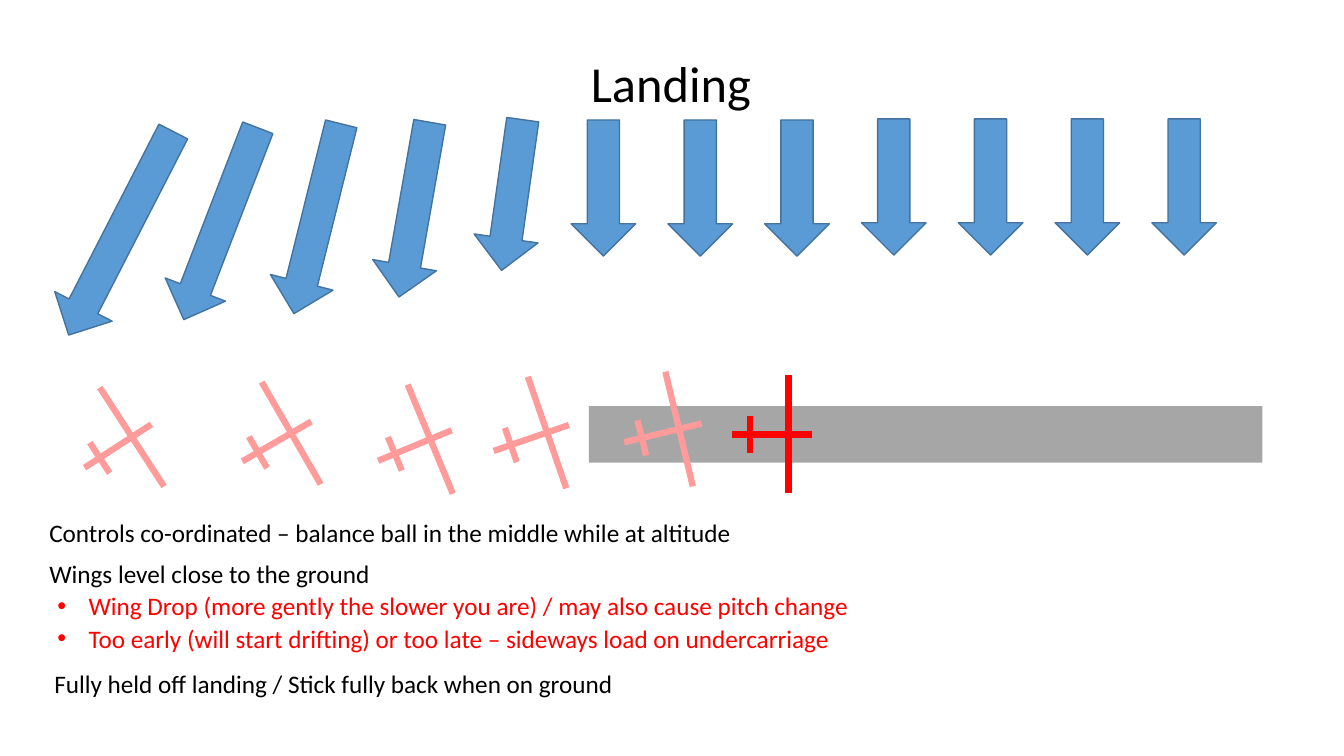
from math import cos, radians, sin

from lxml import etree
from pptx import Presentation
from pptx.dml.color import RGBColor
from pptx.enum.shapes import MSO_CONNECTOR, MSO_SHAPE
from pptx.enum.text import MSO_ANCHOR, MSO_AUTO_SIZE, PP_ALIGN
from pptx.oxml.ns import qn
from pptx.util import Inches, Pt

RECTANGLE = MSO_SHAPE.RECTANGLE
DOWN_ARROW = MSO_SHAPE.DOWN_ARROW
STRAIGHT = MSO_CONNECTOR.STRAIGHT
TOP = MSO_ANCHOR.TOP
GROW = MSO_AUTO_SIZE.SHAPE_TO_FIT_TEXT
LEFT = PP_ALIGN.LEFT

BLACK = RGBColor(0x00, 0x00, 0x00)
RED = RGBColor(0xFF, 0x00, 0x00)
PINK = RGBColor(0xFF, 0x9B, 0x9B)
GREY = RGBColor(0xA6, 0xA6, 0xA6)
BLUE = RGBColor(0x5B, 0x9B, 0xD5)
DARK_BLUE = RGBColor(0x43, 0x73, 0x9E)

SLIDE_W, SLIDE_H = Inches(13.33), Inches(7.5)
ROWS = 75
CELL = SLIDE_H / ROWS

ARROW_W = 6.4
ARROW_PITCH = 9.6
SLANTED_ARROWS = [
    (8.8, 11.8, 22.7, 27.2),
    (18.7, 12, 20.4, 21.1),
    (28.3, 12, 19.4, 14),
    (37.9, 12, 17.6, 10),
    (47.6, 11.8, 15.1, 8),
]
STRAIGHT_LEFT, STRAIGHT_H = 56.65, 13.5
STRAIGHT_TOPS = [11.9] * 3 + [11.8] * 4

FUSELAGE, WING, TAIL = 7.9, 11.7, 3.6
WING_OFFSET, TAIL_OFFSET = 1.65, -2.15
PLANES = [
    (11.7, 44.25, 33, PINK),
    (27.45, 43.8, 30, PINK),
    (41.15, 44.2, 22.5, PINK),
    (52.7, 43.45, 19, PINK),
    (65.75, 42.95, 13.5, PINK),
    (76.55, 43.1, 0, RED),
]

NOTE_H = 4
NOTES = [
    (3.9, 50.8, 70.5, BLACK, False,
     "Controls co-ordinated – balance ball in the middle while at altitude"),
    (3.9, 54.9, 34.2, BLACK, False, "Wings level close to the ground"),
    (4.7, 58.1, 87.1, RED, True,
     "Wing Drop (more gently the slower you are) / may also cause pitch change"),
    (4.7, 61.3, 79.6, RED, True,
     "Too early (will start drifting) or too late – sideways load on undercarriage"),
    (4.4, 65.8, 58.2, BLACK, False,
     "Fully held off landing / Stick fully back when on ground"),
]


def cells(*lengths):
    return [round(length * CELL) for length in lengths]


def add_block(s, kind, box, fill, line=None, rotation=0):
    sp = s.shapes.add_shape(kind, *cells(*box))
    sp.shadow.inherit = False
    sp.rotation = rotation
    sp.fill.solid()
    sp.fill.fore_color.rgb = fill
    if line is None:
        sp.line.fill.background()
    else:
        sp.line.color.rgb = line
        sp.line.width = Pt(1)


def add_bar(group, x, y, dx, dy, color):
    ends = cells(x - dx, y - dy, x + dx, y + dy)
    bar = group.shapes.add_connector(STRAIGHT, *ends)
    bar.line.color.rgb = color
    bar.line.width = Pt(4.5)
    etree.SubElement(bar._element.spPr, qn("a:effectLst"))


def add_plane(s, x, y, pitch, color):
    group = s.shapes.add_group_shape()
    c, d = cos(radians(pitch)), sin(radians(pitch))
    for offset, span in ((WING_OFFSET, WING), (TAIL_OFFSET, TAIL)):
        add_bar(group, x + offset * c, y - offset * d,
                span / 2 * d, span / 2 * c, color)
    add_bar(group, x, y, FUSELAGE / 2 * c, -FUSELAGE / 2 * d, color)


def write_text(sp, text, size, color, bullet=False, wrap=False):
    tf = sp.text_frame
    tf.text = text
    tf.word_wrap = wrap
    tf.auto_size = GROW
    tf.vertical_anchor = TOP
    p = tf.paragraphs[0]
    p.alignment = LEFT
    if bullet:
        pPr = p._p.get_or_add_pPr()
        indent = Inches(0.31)
        pPr.set("marL", str(indent))
        pPr.set("indent", str(-indent))
        font = etree.SubElement(pPr, qn("a:buFont"))
        font.set("typeface", "Arial")
        etree.SubElement(pPr, qn("a:buChar")).set("char", "•")
    r = p.runs[0]
    r.font.name = "Calibri"
    r.font.size = Pt(size)
    r.font.color.rgb = color


def add_title(s, text, box):
    title = s.shapes.title
    title.left, title.top, title.width, title.height = cells(*box)
    write_text(title, text, 36, BLACK)


def main():
    prs = Presentation()
    prs.slide_width, prs.slide_height = SLIDE_W, SLIDE_H
    s = prs.slides.add_slide(prs.slide_layouts[5])

    add_block(s, RECTANGLE, (58.4, 40.3, 66.8, 5.6), GREY)
    add_title(s, "Landing", (57.6, 4.7, 18, 7.1))

    for left, top, height, rotation in SLANTED_ARROWS:
        add_block(s, DOWN_ARROW, (left, top, ARROW_W, height),
                  BLUE, DARK_BLUE, rotation)
    for i, top in enumerate(STRAIGHT_TOPS):
        left = STRAIGHT_LEFT + i * ARROW_PITCH
        add_block(s, DOWN_ARROW, (left, top, ARROW_W, STRAIGHT_H),
                  BLUE, DARK_BLUE)

    for plane in PLANES:
        add_plane(s, *plane)

    for left, top, width, color, bullet, text in NOTES:
        note = s.shapes.add_textbox(*cells(left, top, width, NOTE_H))
        write_text(note, text, 18, color, bullet, wrap=bullet)

    prs.save("out.pptx")


if __name__ == "__main__":
    main()
